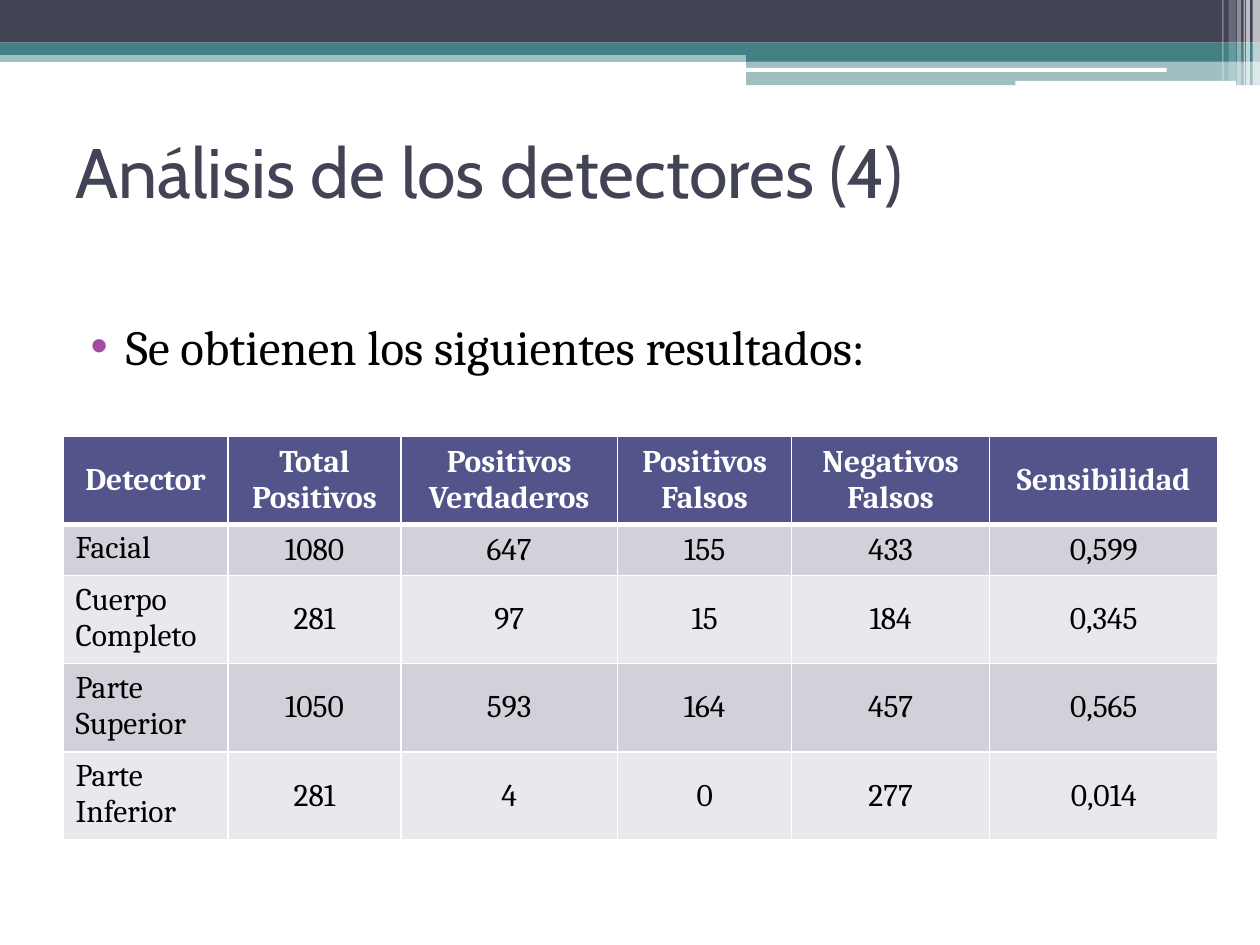
"""Build a slide with a table of detector results under a layered banner."""
from lxml.etree import SubElement as add_node
from pptx import Presentation
from pptx.dml.color import RGBColor
from pptx.enum.shapes import MSO_SHAPE as Preset
from pptx.enum.text import MSO_ANCHOR as Anchor, PP_ALIGN as Align
from pptx.oxml import parse_xml
from pptx.oxml.ns import nsdecls, qn
from pptx.util import Cm, Pt

DARK, TEAL, WHITE, BLACK = "424456", "438086", "FFFFFF", "000000"
HEADER, BANDS, BULLET = "53548A", ("D1D1DA", "E9E9ED"), "A04DA3"

BANNER = [
    (0, 1.02, 25.4, 0.23, TEAL, 50),
    (0, 0, 25.4, 0.86, DARK, 100),
    (0, 0.86, 25.4, 0.25, TEAL, 100),
    (15.04, 0.99, 10.36, 0.25, TEAL, 100),
    (15.04, 1.22, 10.36, 0.5, TEAL, 50),
]
RULES = [(15.01, 1.37, 8.51, 0.08), (20.47, 1.63, 4.45, 0.1)]
STRIPES = [
    (25.25, 0.15, 1.73, 65),
    (25.12, 0.08, 1.73, 65),
    (25.07, 0.03, 1.73, 60),
    (24.94, 0.08, 1.73, 40),
    (24.77, 0.15, 1.63, 20),
    (24.64, 0.03, 1.63, 30),
]
WIDTHS = [3.33, 3.48, 4.37, 3.51, 3.99, 4.6]
HEIGHTS = [1.71, 1.03, 1.71, 1.71, 1.71]
RESULTS = [
    ("Detector", "Total Positivos", "Positivos Verdaderos",
     "Positivos Falsos", "Negativos Falsos", "Sensibilidad"),
    ("Facial", "1080", "647", "155", "433", "0,599"),
    ("Cuerpo Completo", "281", "97", "15", "184", "0,345"),
    ("Parte Superior", "1050", "593", "164", "457", "0,565"),
    ("Parte Inferior", "281", "4", "0", "277", "0,014"),
]


def paint(target, color):
    target.rgb = RGBColor.from_string(color)


class SlideBuilder:
    """Hold the text styles and the current slide."""

    title = {"name": "Cabin", "size": Pt(40)}
    body = {"name": "Cambria", "size": Pt(28)}
    cell = {"name": "Cambria", "size": Pt(18), "bold": False}
    heading = {**cell, "bold": True}

    def __init__(self, deck):
        self.page = deck.slides.add_slide(deck.slide_layouts[6])

    def span(self, para, text, style, color):
        span = para.add_run()
        span.text = text
        for name, value in style.items():
            setattr(span.font, name, value)
        paint(span.font.color, color)

    def bar(self, left, top, width, height, color, opacity=100, preset=Preset.RECTANGLE):
        shape = self.page.shapes.add_shape(preset, Cm(left), Cm(top), Cm(width), Cm(height))
        shape.shadow.inherit = False
        shape.line.fill.background()
        shape.fill.solid()
        paint(shape.fill.fore_color, color)
        if opacity < 100:
            tint = shape.element.spPr.find(f".//{qn('a:srgbClr')}")
            add_node(tint, qn("a:alpha"), val=str(opacity * 1000))

    def text(self, left, top, width, height, text, style, color, anchor=Anchor.TOP):
        box = self.page.shapes.add_textbox(Cm(left), Cm(top), Cm(width), Cm(height))
        box.text_frame.word_wrap = True
        box.text_frame.vertical_anchor = anchor
        para = box.text_frame.paragraphs[0]
        self.span(para, text, style, color)
        return para

    def bullet(self, para, color):
        para.space_before = Pt(3)
        props = para._p.get_or_add_pPr()
        props.set("marL", str(Cm(1.02)))
        props.set("indent", str(Cm(-0.71)))
        add_node(add_node(props, qn("a:buClr")), qn("a:srgbClr"), val=color)
        add_node(props, qn("a:buFont"), typeface="Arial")
        add_node(props, qn("a:buChar"), char="•")

    def borders(self, cell, color, points):
        props = cell._tc.get_or_add_tcPr()
        for index, (side, weight) in enumerate(points.items()):
            props.insert(index, parse_xml(
                f'<a:ln{side} {nsdecls("a")} w="{Pt(weight)}"><a:solidFill>'
                f'<a:srgbClr val="{color}"/></a:solidFill></a:ln{side}>'))

    def table(self, left, top, widths, heights, rows):
        frame = self.page.shapes.add_table(
            len(rows), len(widths), Cm(left), Cm(top), Cm(sum(widths)), Cm(sum(heights)))
        grid = frame.table
        for column, width in zip(grid.columns, widths):
            column.width = Cm(width)
        for line, height in zip(grid.rows, heights):
            line.height = Cm(height)
        for row, texts in enumerate(rows):
            is_head = row == 0
            fill = HEADER if is_head else BANDS[(row - 1) % 2]
            for column, text in enumerate(texts):
                cell = grid.cell(row, column)
                centred = is_head or column > 0
                cell.vertical_anchor = Anchor.MIDDLE if centred else Anchor.TOP
                cell.fill.solid()
                paint(cell.fill.fore_color, fill)
                self.borders(cell, WHITE, {
                    "L": 1, "R": 1, "T": 3 if row == 1 else 1, "B": 3 if is_head else 1})
                para = cell.text_frame.paragraphs[0]
                para.alignment = Align.CENTER if centred else Align.LEFT
                self.span(para, text, self.heading if is_head else self.cell,
                          WHITE if is_head else BLACK)


def main():
    deck = Presentation()
    deck.slide_width, deck.slide_height = Cm(25.4), Cm(19.05)
    slide = SlideBuilder(deck)
    for band in BANNER:
        slide.bar(*band)
    for rule in RULES:
        slide.bar(*rule, WHITE, preset=Preset.ROUNDED_RECTANGLE)
    for left, width, height, opacity in STRIPES:
        slide.bar(left, 0, width, height, WHITE, opacity)
    slide.text(1.27, 1.96, 22.86, 2.97, "Análisis de los detectores (4)",
               slide.title, DARK, Anchor.MIDDLE)
    intro = slide.text(1.27, 6.25, 22.86, 12.01, "Se obtienen los siguientes resultados:",
                       slide.body, BLACK)
    slide.bullet(intro, BULLET)
    slide.table(1.27, 8.79, WIDTHS, HEIGHTS, RESULTS)
    deck.save("out.pptx")


if __name__ == "__main__":
    main()
